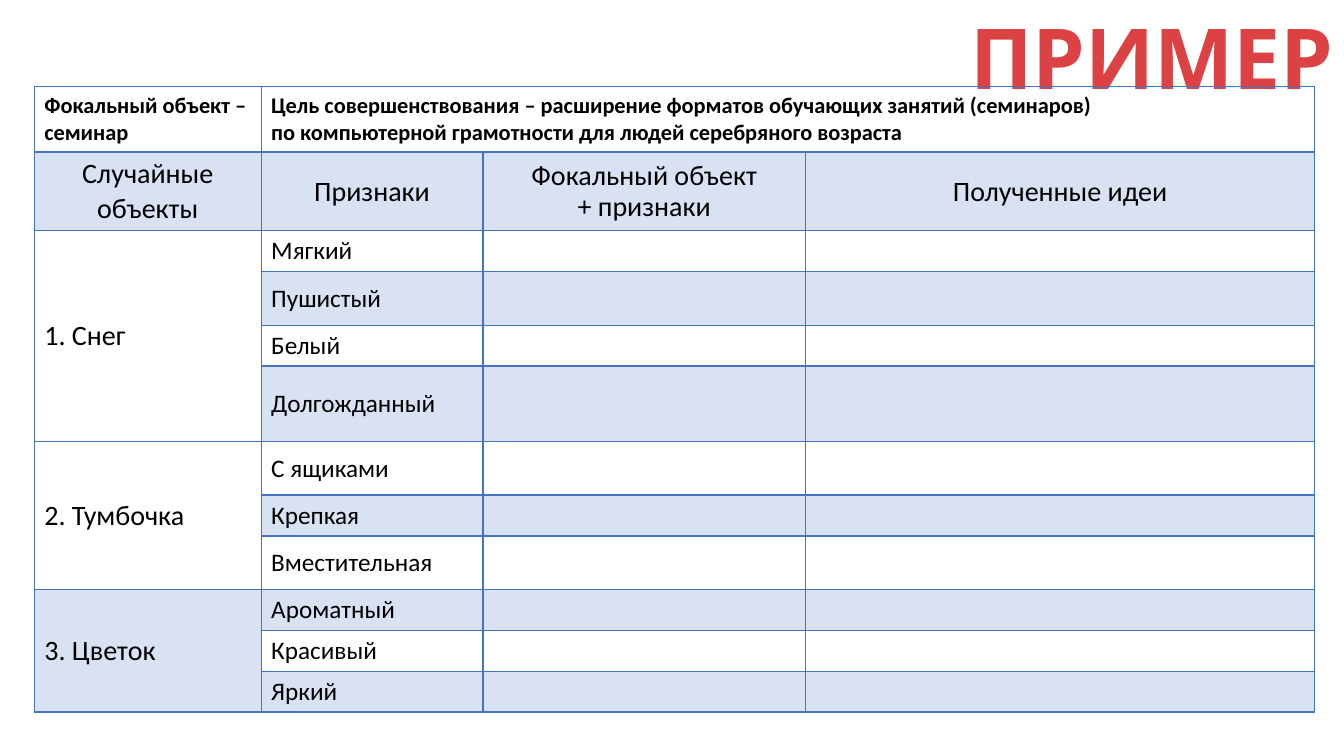
from copy import deepcopy

from lxml import etree
from pptx import Presentation
from pptx import util as u
from pptx.dml.color import RGBColor
from pptx.enum import text
from pptx.oxml.ns import qn

RED = RGBColor(0xDC, 0x42, 0x43)
BLACK = RGBColor(0, 0, 0)
BLUE = RGBColor(0x44, 0x72, 0xC4)


def write(frame, words, size=20, font="Calibri", color=BLACK, bold=False,
          align=text.PP_ALIGN.LEFT, spacing=1.0):
    """Fill the frame; each list item is a paragraph, a newline is a line break."""
    for i, line in enumerate(words):
        paragraph = frame.paragraphs[0] if i == 0 else frame.add_paragraph()
        paragraph.text = line
        paragraph.alignment = align
        paragraph.line_spacing = spacing
        for run in paragraph.runs:
            run.font.size = u.Pt(size)
            run.font.name = font
            run.font.bold = bold
            run.font.color.rgb = color
        for line_break in paragraph._p.findall(qn("a:br")):
            line_break.insert(0, deepcopy(paragraph.runs[0]._r.rPr))


def draw_borders(cell, bottom):
    for i, (side, width) in enumerate(zip("LRTB", (1, 1, 1, bottom))):
        line = etree.Element(qn(f"a:ln{side}"), w=str(u.Pt(width)))
        fill = etree.SubElement(line, qn("a:solidFill"))
        etree.SubElement(fill, qn("a:srgbClr"), val=str(BLUE))
        cell._tc.get_or_add_tcPr().insert(i, line)


deck = Presentation()
deck.slide_width, deck.slide_height = u.Inches(13.33), u.Inches(7.5)
slide = deck.slides.add_slide(deck.slide_layouts[5])

# Title
title = slide.shapes.title
title.left, title.top = u.Inches(1.83), u.Inches(0.1)
title.width, title.height = u.Inches(11.5), u.Inches(1.03)
title.text_frame.auto_size = text.MSO_AUTO_SIZE.NONE
title.text_frame.vertical_anchor = text.MSO_ANCHOR.MIDDLE
write(title.text_frame, ["ПРИМЕР"], size=60, font="Karla", color=RED, bold=True,
      align=text.PP_ALIGN.RIGHT, spacing=0.9)

# Table grid
column_widths = [2.25, 2.2, 3.2, 5.05]
row_heights = [0.65, 0.78, 0.4, 0.53, 0.4, 0.75, 0.53, 0.4, 0.53, 0.4, 0.4, 0.4]
table = slide.shapes.add_table(
    len(row_heights), len(column_widths), u.Inches(0.34), u.Inches(0.86),
    u.Inches(sum(column_widths)), u.Inches(sum(row_heights))).table
table.first_row = table.horz_banding = False
for column, width in zip(table.columns, column_widths):
    column.width = u.Inches(width)
for row, height in zip(table.rows, row_heights):
    row.height = u.Inches(height)

# Every second row is tinted
for r in range(len(row_heights)):
    for c in range(len(column_widths)):
        cell = table.cell(r, c)
        if r % 2:
            cell.fill.solid()
            cell.fill.fore_color.rgb = BLUE
            tint = cell._tc.tcPr.find(".//" + qn("a:srgbClr"))
            etree.SubElement(tint, qn("a:alpha"), val="20000")
        else:
            cell.fill.background()
        if r:
            cell.vertical_anchor = text.MSO_ANCHOR.MIDDLE
        draw_borders(cell, bottom=1 if r else 2)

# Focal object and goal
table.cell(0, 1).merge(table.cell(0, 3))
write(table.cell(0, 0).text_frame, ["Фокальный объект – семинар"], size=16, bold=True)
write(table.cell(0, 1).text_frame,
      ["Цель совершенствования – расширение форматов обучающих занятий (семинаров)\n"
       "по компьютерной грамотности для людей серебряного возраста"], size=16, bold=True)

# Column headings
headings = [["Случайные объекты"], ["Признаки"],
            ["Фокальный объект", "+ признаки"], ["Полученные идеи"]]
for c, heading in enumerate(headings):
    write(table.cell(1, c).text_frame, heading, align=text.PP_ALIGN.CENTER,
          spacing=0.9 if len(heading) > 1 else 1.0)

# Random objects with their features
random_objects = {
    "1. Снег": ["Мягкий", "Пушистый", "Белый", "Долгожданный"],
    "2. Тумбочка": ["С ящиками", "Крепкая", "Вместительная"],
    "3. Цветок": ["Ароматный", "Красивый", "Яркий"],
}
top_row = 2
for random_object, features in random_objects.items():
    table.cell(top_row, 0).merge(table.cell(top_row + len(features) - 1, 0))
    write(table.cell(top_row, 0).text_frame, [random_object])
    for r, feature in enumerate(features, top_row):
        write(table.cell(r, 1).text_frame, [feature], size=18)
    top_row += len(features)

deck.save("out.pptx")
